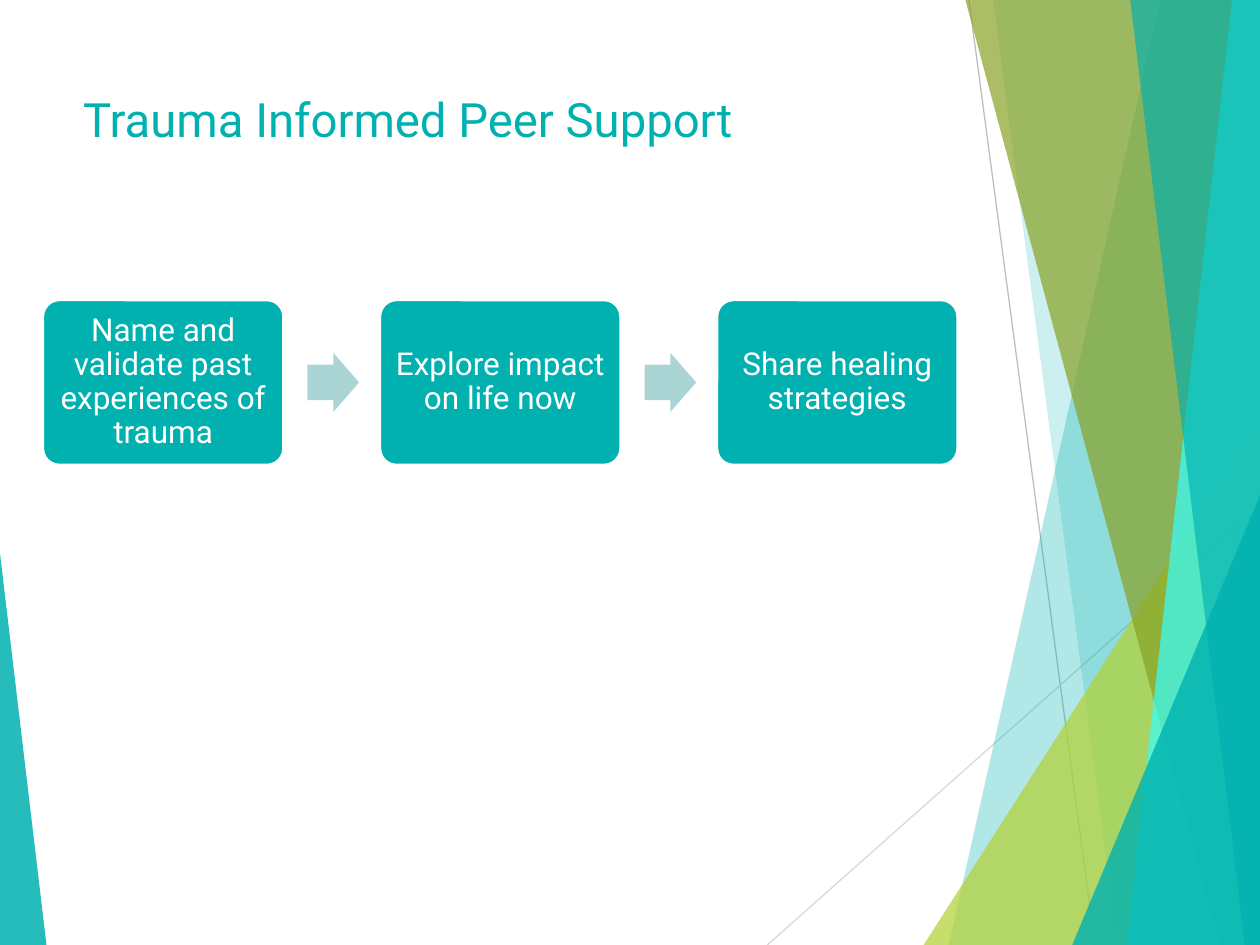
from lxml import etree
from pptx import Presentation
from pptx.dml.color import RGBColor
from pptx.enum import shapes, text
from pptx.oxml.ns import qn
from pptx.util import Pt

W, H, TOP = 720, 540, -0.72
FONT = "Roboto"
COLORS = {"teal": "00B1B0", "lime": "B2D235", "olive": "88A124", "aqua": "37FFFE",
          "pale": "ABD5D4", "white": "FFFFFF", "line": "BFBFBF", "faint": "D9D9D9"}

TITLE = "Trauma Informed Peer Support"
STEPS = ["Name and validate past experiences of trauma",
         "Explore impact on life now",
         "Share healing strategies"]
LINES = [(553.7, 0, 625.7, H, "line"), (W, 290.2, 438.5, H, "faint")]
FACETS = [
    ("band", 663.1, 542.2, "teal", 30),
    ("band", 567.4, 638.6, "teal", 20),
    ("triangle", (527.8, 239.8, W), 1, "lime", 72),
    ("band", 551.5, 697, "olive", 70),
    ("band", 704.2, 643.7, "aqua", 70),
    ("band", 645.8, 711.4, "teal", 65),
    ("triangle", (612.7, 283, W), 1, "teal", 80),
    ("triangle", (0, 316.1, 26.6), 0, "teal", 85),
]
BOX = {"left": 24.5, "top": 171.4, "width": 137.5, "height": 94.3, "pitch": 192.6}
ARROW = {"gap": 13.7, "width": 29.5, "height": 33.8}


def rgb(name):
    return RGBColor.from_string(COLORS[name])


def set_all(obj, values):
    for key, value in values.items():
        setattr(obj, key, value)


def paint(sp, color, alpha=100):
    sp.shadow.inherit = False
    sp.fill.solid()
    sp.fill.fore_color.rgb = rgb(color)
    sp.line.fill.background()
    if alpha < 100:
        clr = sp.fill._xPr.find(qn("a:solidFill"))[0]
        etree.SubElement(clr, qn("a:alpha")).set("val", str(alpha * 1000))


def add_preset(s, kind, left, top, width, height, adjustments, color, alpha=100):
    sp = s.shapes.add_shape(kind, Pt(left), Pt(top), Pt(width), Pt(height))
    for i, value in enumerate(adjustments):
        sp.adjustments[i] = value
    paint(sp, color, alpha)
    return sp


def add_band(s, top_x, bottom_x, color, alpha):
    builder = s.shapes.build_freeform(Pt(top_x), Pt(TOP))
    corners = [(W, TOP), (W, H), (bottom_x, H)]
    builder.add_line_segments([(Pt(x), Pt(y)) for x, y in corners], close=True)
    paint(builder.convert_to_shape(), color, alpha)


def add_line(s, x1, y1, x2, y2, color):
    line = s.shapes.add_connector(shapes.MSO_CONNECTOR.STRAIGHT, Pt(x1), Pt(y1), Pt(x2), Pt(y2))
    line.line.color.rgb = rgb(color)
    line.line.width = Pt(0.75)
    etree.SubElement(line._element.spPr, qn("a:effectLst"))


def write(tf, words, size, color, frame, para):
    set_all(tf, {"word_wrap": True, "auto_size": text.MSO_AUTO_SIZE.NONE, **frame})
    p = tf.paragraphs[0]
    set_all(p, para)
    r = p.add_run()
    r.text = words
    set_all(r.font, {"name": FONT, "size": Pt(size)})
    r.font.color.rgb = rgb(color)


def add_title(s):
    sp = s.shapes.title
    set_all(sp, {"left": Pt(40.3), "top": Pt(48.2), "width": Pt(507.6), "height": Pt(103.7)})
    write(sp.text_frame, TITLE, 27, "teal",
          {"vertical_anchor": text.MSO_ANCHOR.TOP}, {"alignment": text.PP_ALIGN.LEFT})


def add_steps(s):
    margins = {f"margin_{side}": Pt(5) for side in ("left", "top", "right", "bottom")}
    arrow_top = BOX["top"] + (BOX["height"] - ARROW["height"]) / 2
    for i, words in enumerate(STEPS):
        left = BOX["left"] + i * BOX["pitch"]
        box = add_preset(s, shapes.MSO_SHAPE.ROUNDED_RECTANGLE, left, BOX["top"],
                         BOX["width"], BOX["height"], [0.1], "teal")
        box.line.color.rgb = rgb("white")
        box.line.width = Pt(1.5)
        write(box.text_frame, words, 18, "white",
              {"vertical_anchor": text.MSO_ANCHOR.MIDDLE, **margins},
              {"alignment": text.PP_ALIGN.CENTER, "line_spacing": 0.9})
        if i < len(STEPS) - 1:
            add_preset(s, shapes.MSO_SHAPE.RIGHT_ARROW, left + BOX["width"] + ARROW["gap"],
                       arrow_top, ARROW["width"], ARROW["height"], [0.6, 0.5], "pale")


def main():
    prs = Presentation()
    set_all(prs, {"slide_width": Pt(W), "slide_height": Pt(H)})
    s = prs.slides.add_slide(prs.slide_layouts[5])
    for line in LINES:
        add_line(s, *line)
    for kind, start, end, color, alpha in FACETS:
        if kind == "band":
            add_band(s, start, end, color, alpha)
        else:
            left, top, right = start
            add_preset(s, shapes.MSO_SHAPE.ISOSCELES_TRIANGLE, left, top,
                       right - left, H - top, [end], color, alpha)
    add_title(s)
    add_steps(s)
    prs.save("out.pptx")


if __name__ == "__main__":
    main()
